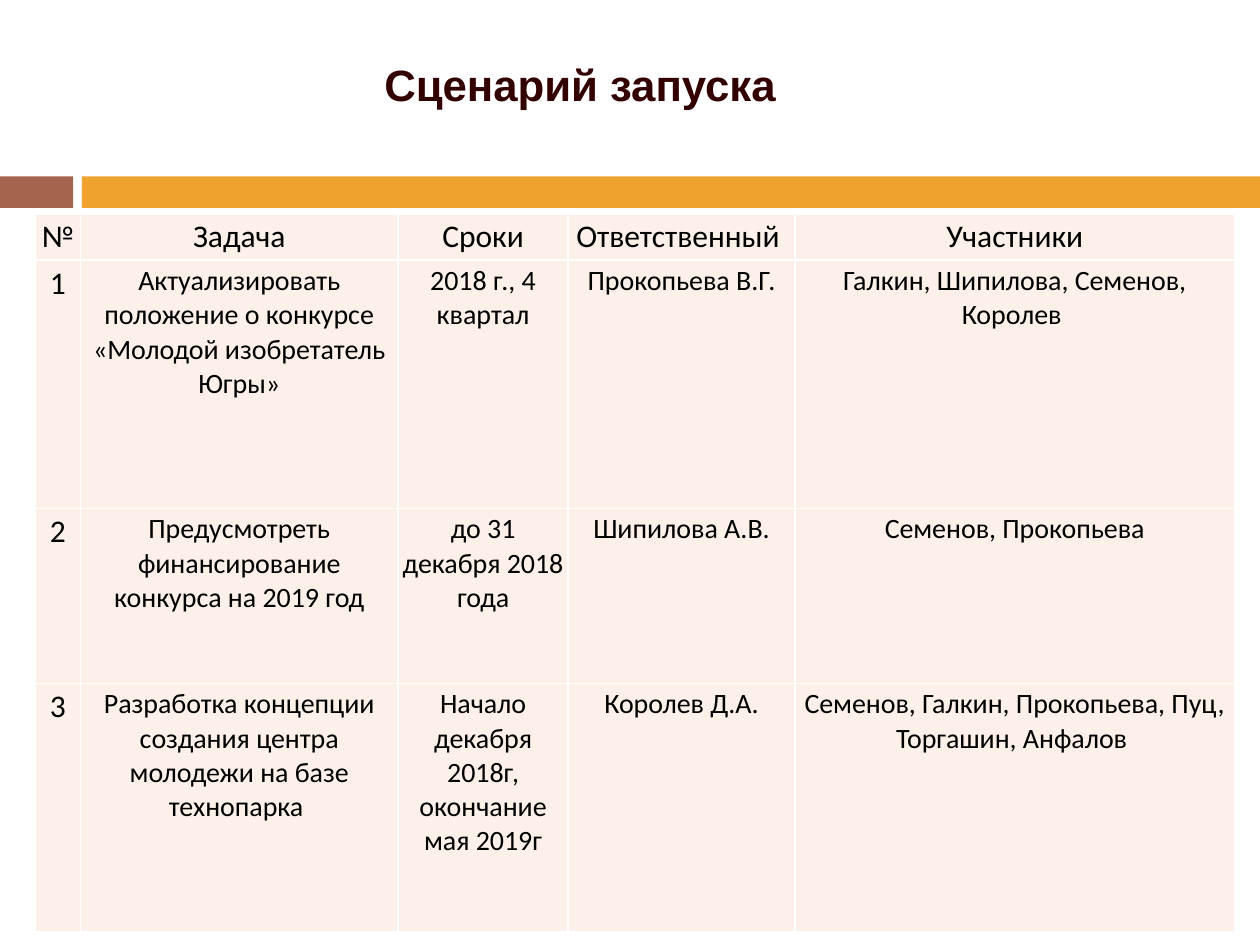
"""Builds the launch scenario slide with its task table."""
import pptx
import pptx.util
import pptx.dml.color
import pptx.enum.shapes
import pptx.enum.text
import pptx.oxml
import pptx.oxml.ns

Inches, Pt = pptx.util.Inches, pptx.util.Pt
ALIGN = pptx.enum.text.PP_ALIGN
ANCHOR = pptx.enum.text.MSO_ANCHOR

TITLE = "Сценарий запуска"
ROWS = [
    ("№", "Задача", "Сроки", "Ответственный ", "Участники"),
    ("1", "Актуализировать положение о конкурсе «Молодой изобретатель Югры»",
     "2018 г., 4 квартал", "Прокопьева В.Г.", "Галкин, Шипилова, Семенов, Королев "),
    ("2", "Предусмотреть финансирование конкурса на 2019 год",
     "до 31 декабря 2018 года", "Шипилова А.В.", "Семенов, Прокопьева"),
    ("3", "Разработка концепции создания центра молодежи на базе технопарка ",
     "Начало декабря 2018г, окончание мая 2019г", "Королев Д.А.",
     "Семенов, Галкин, Прокопьева, Пуц, Торгашин, Анфалов "),
]
COL_WIDTHS = [0.36, 2.52, 1.35, 1.8, 3.49]
ROW_HEIGHTS = [0.26, 1.97, 1.39, 1.97]
TABLE_LEFT, TABLE_TOP = 0.28, 1.7
CELL_MARGIN = 0.03
BAND_TOP, BAND_HEIGHT = 1.4, 0.25
BANDS = [(0, 0.58, "brown"), (0.65, 9.35, "orange")]

THEME = {
    "brown": "A5644E", "orange": "F0A22E", "title": "330000", "text": "000000",
    "cell": "FCF0E8", "border": "FFFFFF",
    "title_font": "Arial", "body_font": "Calibri",
    "title_size": 25, "head_size": 18, "body_size": 16,
}


def rgb(name):
    return pptx.dml.color.RGBColor.from_string(THEME[name])


def write(tf, text, *, font, size, color, bold=False, align=ALIGN.LEFT, after=0):
    p = tf.paragraphs[0]
    p.alignment = align
    p.space_after = Pt(after)
    r = p.add_run()
    r.text = text
    r.font.name = THEME[font]
    r.font.size = Pt(THEME[size])
    r.font.bold = bold
    r.font.color.rgb = rgb(color)


def set_borders(cell, width=1):
    tc_pr = cell._tc.get_or_add_tcPr()
    for i, side in enumerate(("lnL", "lnR", "lnT", "lnB")):
        tc_pr.insert(i, pptx.oxml.parse_xml(
            f'<a:{side} {pptx.oxml.ns.nsdecls("a")} w="{Pt(width)}"><a:solidFill>'
            f'<a:srgbClr val="{THEME["border"]}"/></a:solidFill></a:{side}>'))


def add_band(s, left, width, color):
    sp = s.shapes.add_shape(pptx.enum.shapes.MSO_SHAPE.RECTANGLE, Inches(left),
                            Inches(BAND_TOP), Inches(width), Inches(BAND_HEIGHT))
    sp.shadow.inherit = False
    sp.fill.solid()
    sp.fill.fore_color.rgb = rgb(color)
    sp.line.fill.background()


def add_title(s):
    sp = s.shapes.title
    sp.left, sp.top, sp.width, sp.height = map(Inches, (2.95, 0.24, 4.04, 0.85))
    tf = sp.text_frame
    tf.word_wrap = True
    tf.vertical_anchor = ANCHOR.MIDDLE
    write(tf, TITLE, font="title_font", size="title_size", color="title", bold=True)


def add_tasks(s):
    table = s.shapes.add_table(
        len(ROWS), len(COL_WIDTHS), Inches(TABLE_LEFT), Inches(TABLE_TOP),
        Inches(sum(COL_WIDTHS)), Inches(sum(ROW_HEIGHTS))).table
    table.first_row = table.horz_banding = False
    for col, width in zip(table.columns, COL_WIDTHS):
        col.width = Inches(width)
    for i, (row, height) in enumerate(zip(table.rows, ROW_HEIGHTS)):
        row.height = Inches(height)
        for j, cell in enumerate(row.cells):
            cell.margin_left = cell.margin_right = Inches(CELL_MARGIN)
            cell.margin_top = cell.margin_bottom = Inches(CELL_MARGIN)
            cell.vertical_anchor = ANCHOR.TOP
            cell.fill.solid()
            cell.fill.fore_color.rgb = rgb("cell")
            set_borders(cell)
            size = "body_size" if i and j else "head_size"
            write(cell.text_frame, ROWS[i][j], font="body_font", size=size,
                  color="text", align=ALIGN.CENTER, after=10)


def main():
    prs = pptx.Presentation()
    prs.slide_width, prs.slide_height = Inches(10), Inches(7.5)
    s = prs.slides.add_slide(prs.slide_layouts.get_by_name("Title Only"))
    for band in BANDS:
        add_band(s, *band)
    add_title(s)
    add_tasks(s)
    prs.save("out.pptx")


if __name__ == "__main__":
    main()
